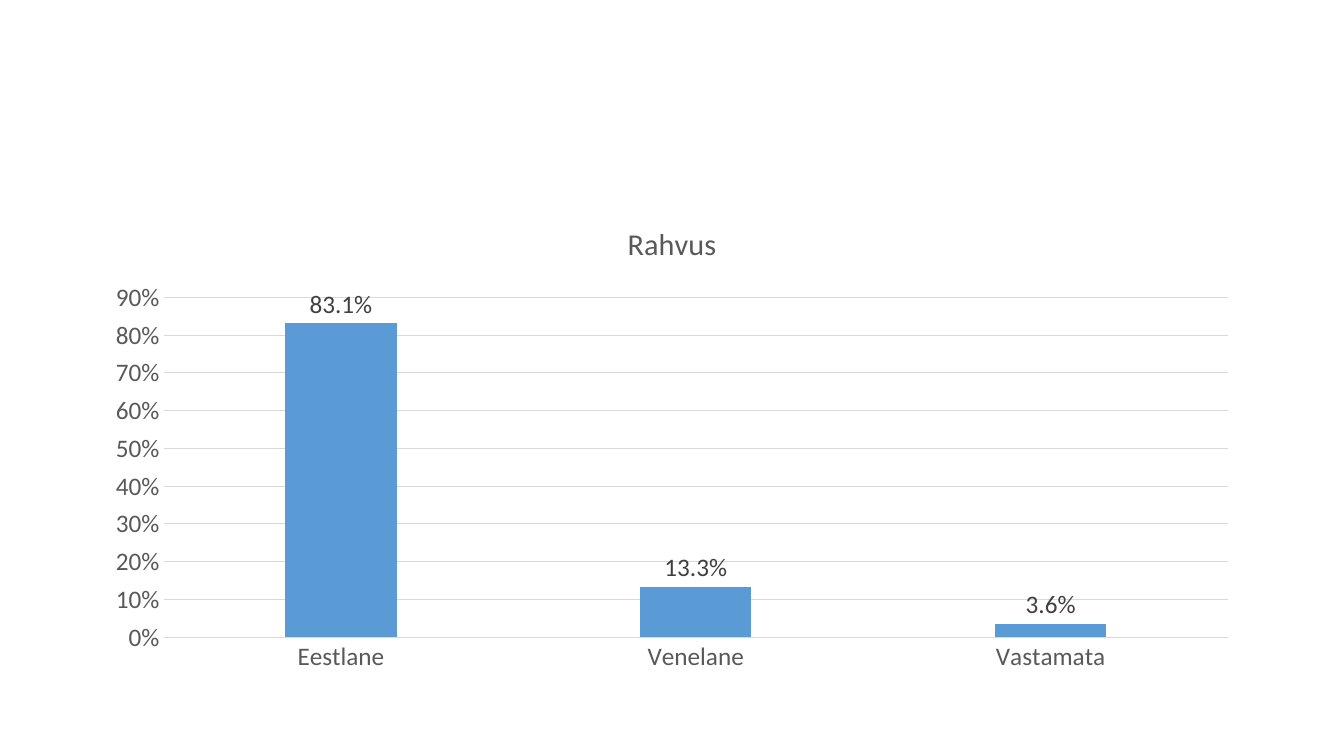
from pptx import Presentation
from pptx.chart.data import CategoryChartData
from pptx.dml.color import RGBColor
from pptx.enum.chart import XL_CHART_TYPE, XL_LABEL_POSITION, XL_TICK_MARK
from pptx.util import Inches, Pt

COLUMN = XL_CHART_TYPE.COLUMN_CLUSTERED
OUTSIDE = XL_LABEL_POSITION.OUTSIDE_END
NO_TICK = XL_TICK_MARK.NONE

WIDTH, HEIGHT = Inches(13.33), Inches(7.5)
FACE = "Calibri"
BLUE, GRAY, DARK, PALE = "5B9BD5", "595959", "404040", "D9D9D9"
SHARES = {"Eestlane": 0.831, "Venelane": 0.133, "Vastamata": 0.036}


def color(code):
    return RGBColor.from_string(code)


def set_font(font, size, code):
    font.name = FACE
    font.size = Pt(size)
    font.bold = False
    font.color.rgb = color(code)


def set_line(line):
    line.color.rgb = color(PALE)
    line.width = Pt(0.75)


def style_title(chart, text):
    chart.has_title = True
    frame = chart.chart_title.text_frame
    frame.text = text
    set_font(frame.paragraphs[0].font, 21.6, GRAY)
    chart.chart_title.include_in_layout = False


def style_axes(chart):
    groups, values = chart.category_axis, chart.value_axis
    for axis in (groups, values):
        axis.major_tick_mark = axis.minor_tick_mark = NO_TICK
        set_font(axis.tick_labels.font, 18, GRAY)
    set_line(groups.format.line)

    # Percent scale with gridlines only
    values.minimum_scale, values.maximum_scale = 0, 0.9
    values.major_unit = 0.1
    values.tick_labels.number_format = "0%"
    values.tick_labels.number_format_is_linked = False
    values.format.line.fill.background()
    values.has_major_gridlines = True
    set_line(values.major_gridlines.format.line)


def style_bars(plot):
    plot.gap_width, plot.overlap = 219, -27
    plot.vary_by_categories = False
    bars = plot.series[0]
    bars.format.fill.solid()
    bars.format.fill.fore_color.rgb = color(BLUE)

    # Value labels above the bars
    labels = bars.data_labels
    labels.show_value = True
    labels.number_format = "0.0%"
    labels.number_format_is_linked = False
    labels.position = OUTSIDE
    set_font(labels.font, 18, DARK)


def add_bars(slide, title, shares, left, top, width, height):
    data = CategoryChartData(number_format="0.0%")
    data.categories = list(shares)
    data.add_series("Series 1", list(shares.values()))
    chart = slide.shapes.add_chart(
        COLUMN, left, top, width, height, data).chart
    chart.has_legend = False
    set_font(chart.font, 18, "000000")
    style_title(chart, title)
    style_axes(chart)
    style_bars(chart.plots[0])


def main():
    deck = Presentation()
    deck.slide_width, deck.slide_height = WIDTH, HEIGHT
    slide = deck.slides.add_slide(deck.slide_layouts[6])

    # Nationality chart, centred between equal side margins
    margin = Inches(0.92)
    add_bars(slide, "Rahvus", SHARES, margin, Inches(2),
             WIDTH - 2 * margin, Inches(4.76))
    deck.save("out.pptx")


if __name__ == "__main__":
    main()
